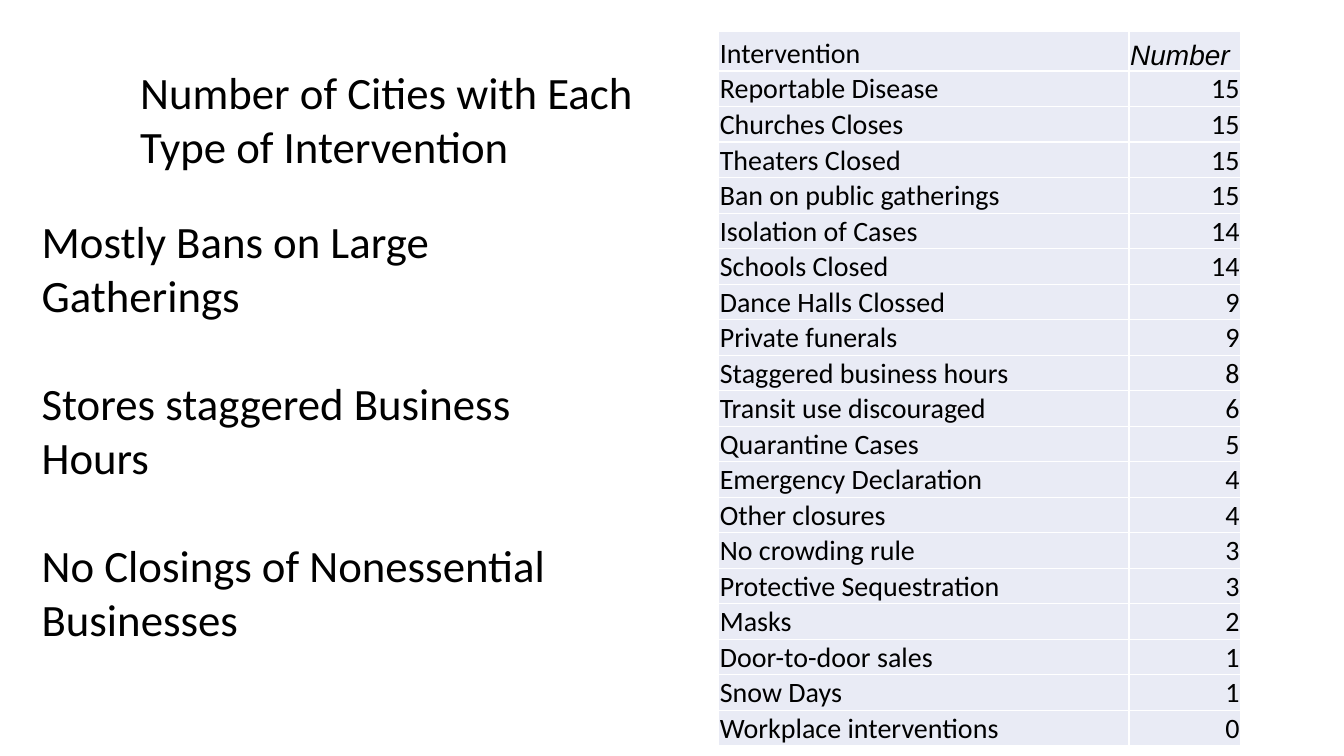
import pptx
import pptx.util
import pptx.dml.color
import pptx.enum.text
import lxml.etree
from pptx.util import Cm

COLORS = {"text": "000000", "cell": "E9EBF5", "border": "FFFFFF"}
ALIGN = pptx.enum.text.PP_ALIGN
ANCHOR = pptx.enum.text.MSO_ANCHOR
DRAWING = "http://schemas.openxmlformats.org/drawingml/2006/main"

TITLE = ["Number of Cities with Each", "Type of Intervention"]
FINDINGS = [
    ("Mostly Bans on Large Gatherings", 0),
    ("Stores staggered Business Hours", 39),
    ("No Closings of Nonessential", 39),
    ("Businesses", 0),
]
INTERVENTIONS = [
    ("Reportable Disease", 15),
    ("Churches Closes", 15),
    ("Theaters Closed", 15),
    ("Ban on public gatherings", 15),
    ("Isolation of Cases", 14),
    ("Schools Closed", 14),
    ("Dance Halls Clossed", 9),
    ("Private funerals", 9),
    ("Staggered business hours", 8),
    ("Transit use discouraged", 6),
    ("Quarantine Cases", 5),
    ("Emergency Declaration", 4),
    ("Other closures", 4),
    ("No crowding rule", 3),
    ("Protective Sequestration", 3),
    ("Masks", 2),
    ("Door-to-door sales", 1),
    ("Snow Days", 1),
    ("Workplace interventions", 0),
]


def rgb(name):
    return pptx.dml.color.RGBColor.from_string(COLORS[name])


def write(para, text, size=32, font="Calibri", italic=False, align=ALIGN.LEFT, before=0):
    para.alignment = align
    para.space_before = pptx.util.Pt(before)
    span = para.add_run()
    span.text = text
    span.font.size = pptx.util.Pt(size)
    span.font.name = font
    span.font.italic = italic
    span.font.color.rgb = rgb("text")


def fill_frame(frame, lines):
    frame.word_wrap = True
    frame.auto_size = pptx.enum.text.MSO_AUTO_SIZE.NONE
    frame.vertical_anchor = ANCHOR.TOP
    for index, (text, before) in enumerate(lines):
        para = frame.paragraphs[0] if index == 0 else frame.add_paragraph()
        write(para, text, before=before)


def add_title(page, left, top, width, height):
    title = page.shapes.title
    title.left, title.top, title.width, title.height = left, top, width, height
    fill_frame(title.text_frame, [(line, 0) for line in TITLE])


def add_findings(page, left, top, width, height):
    box = page.shapes.add_textbox(left, top, width, height)
    fill_frame(box.text_frame, FINDINGS)


def style_cell(cell):
    cell.vertical_anchor = ANCHOR.BOTTOM
    cell.margin_left = cell.margin_right = cell.margin_top = Cm(0.03)
    cell.margin_bottom = 0
    properties = cell._tc.get_or_add_tcPr()
    for side in ("lnL", "lnR", "lnT", "lnB"):
        line = lxml.etree.SubElement(properties, f"{{{DRAWING}}}{side}", w="12700")
        solid = lxml.etree.SubElement(line, f"{{{DRAWING}}}solidFill")
        lxml.etree.SubElement(solid, f"{{{DRAWING}}}srgbClr", val=COLORS["border"])
    cell.fill.solid()
    cell.fill.fore_color.rgb = rgb("cell")


def add_interventions(page, left, top, width, height):
    count = len(INTERVENTIONS) + 1
    table = page.shapes.add_table(count, 2, left, top, width, height).table
    table.first_row = table.horz_banding = False
    number_width = Cm(2.82)
    table.columns[0].width = width - number_width
    table.columns[1].width = number_width
    header_height = Cm(0.99)
    for index, row in enumerate(table.rows):
        row.height = header_height if index == 0 else (height - header_height) // (count - 1)
        for cell in row.cells:
            style_cell(cell)
    write(table.cell(0, 0).text_frame.paragraphs[0], "Intervention", size=20)
    write(table.cell(0, 1).text_frame.paragraphs[0], "Number", size=20, font="Arial", italic=True)
    for index, (name, number) in enumerate(INTERVENTIONS, 1):
        write(table.cell(index, 0).text_frame.paragraphs[0], name, size=20)
        write(table.cell(index, 1).text_frame.paragraphs[0], str(number), size=20, align=ALIGN.RIGHT)


def main():
    deck = pptx.Presentation()
    deck.slide_width, deck.slide_height = Cm(33.87), Cm(19.05)
    page = deck.slides.add_slide(deck.slide_layouts.get_by_name("Title Only"))
    add_interventions(page, Cm(18.11), Cm(0.8), Cm(13.16), Cm(17.48))
    add_title(page, Cm(3.28), Cm(1.5), Cm(13.06), Cm(3))
    add_findings(page, Cm(0.8), Cm(5.26), Cm(14.3), Cm(12.57))
    deck.save("out.pptx")


if __name__ == "__main__":
    main()
